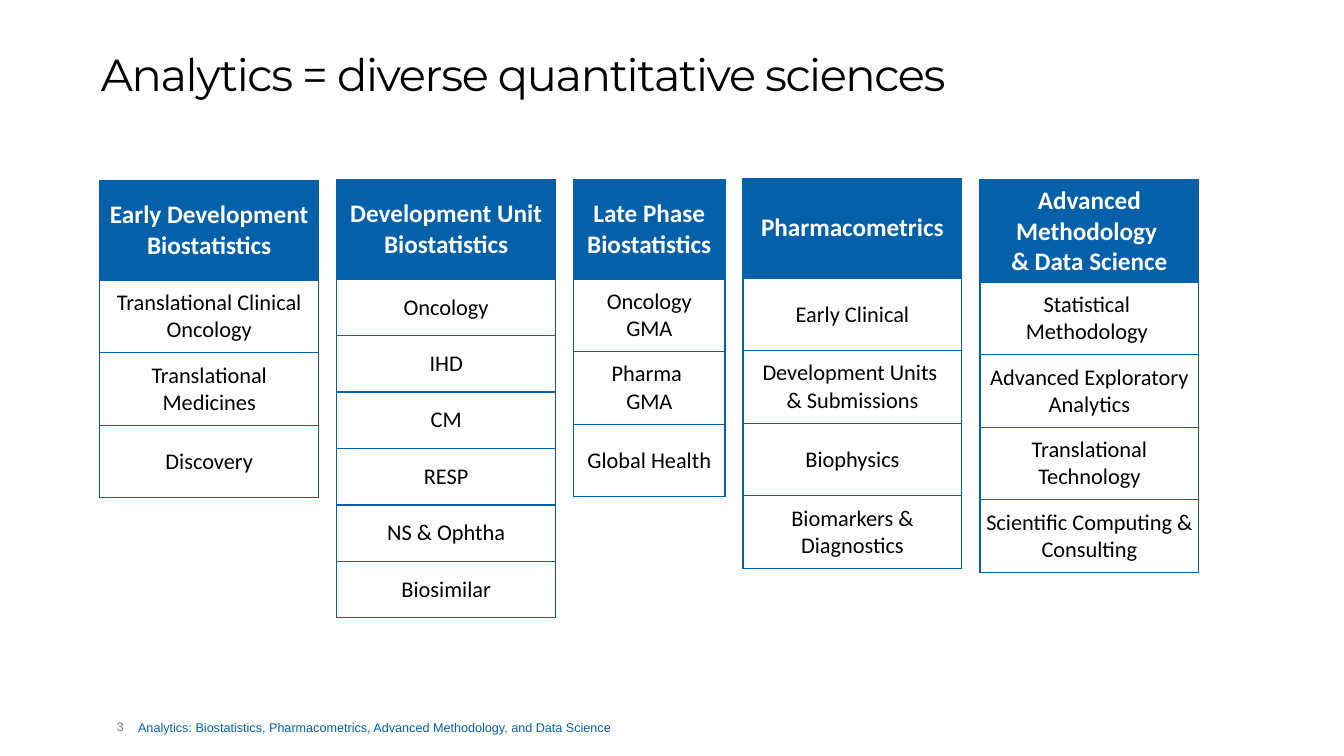
from dataclasses import dataclass

import pptx
import pptx.dml.color
import pptx.enum.text
import pptx.oxml
import pptx.oxml.ns
import pptx.util

Inches = pptx.util.Inches
ANCHOR = pptx.enum.text.MSO_ANCHOR
ALIGN = pptx.enum.text.PP_ALIGN


@dataclass(frozen=True)
class Theme:
    blue: str = "0460A9"
    white: str = "FFFFFF"
    black: str = "000000"
    grey: str = "7F7F7F"
    title_font: str = "Montserrat"
    table_font: str = "Calibri"
    footer_font: str = "Arial"
    title_size: int = 32
    heading_size: int = 18
    team_size: int = 16
    footer_size: int = 9


THEME = Theme()
LEFT, GAP = 0.99, 0.18
HEADING_HEIGHT = 0.99

DEPARTMENTS = [
    ("Early Development Biostatistics", 1.79, 2.17, 0.72,
     ["Translational Clinical Oncology", "Translational Medicines", "Discovery"]),
    ("Development Unit Biostatistics", 1.78, 2.17, 0.56,
     ["Oncology", "IHD", "CM", "RESP", "NS & Ophtha", "Biosimilar"]),
    ("Late Phase\nBiostatistics", 1.78, 1.5, 0.72,
     ["Oncology\vGMA", "Pharma \vGMA", "Global Health"]),
    ("Pharmacometrics", 1.77, 2.17, 0.72,
     ["Early Clinical", "Development Units \v& Submissions", "Biophysics",
      "Biomarkers & Diagnostics"]),
    ("Advanced Methodology \v& Data Science", 1.78, 2.17, 0.72,
     ["Statistical \vMethodology ", "Advanced Exploratory\vAnalytics",
      "Translational Technology", "Scientific Computing & Consulting"]),
]


def rgb(colour):
    return pptx.dml.color.RGBColor.from_string(colour)


def write(frame, text, *, font, size, colour, bold=False, align=ALIGN.LEFT,
          line_spacing=None, tracking=None):
    frame.text = text
    for paragraph in frame.paragraphs:
        paragraph.alignment = align
        paragraph.line_spacing = line_spacing
        for run in paragraph.runs:
            run.font.name = font
            run.font.size = pptx.util.Pt(size)
            run.font.bold = bold
            run.font.color.rgb = rgb(colour)
            if tracking is not None:
                run.font._element.set("spc", str(int(tracking * 100)))


def add_label(slide, text, left, top, width, height, anchor=ANCHOR.TOP, **style):
    label = slide.shapes.add_textbox(*map(Inches, (left, top, width, height)))
    frame = label.text_frame
    frame.word_wrap = True
    frame.vertical_anchor = anchor
    frame.margin_left = frame.margin_right = 0
    frame.margin_top = frame.margin_bottom = 0
    write(frame, text, **style)


def outline_cell(cell, colour):
    properties = cell._tc.get_or_add_tcPr()
    for position, side in enumerate(("lnL", "lnR", "lnT", "lnB")):
        properties.insert(position, pptx.oxml.parse_xml(
            f'<a:{side} {pptx.oxml.ns.nsdecls("a")} w="12700"><a:solidFill>'
            f'<a:srgbClr val="{colour}"/></a:solidFill></a:{side}>'))


def fill_cell(cell, text, fill, **style):
    cell.fill.solid()
    cell.fill.fore_color.rgb = rgb(fill)
    cell.vertical_anchor = ANCHOR.MIDDLE
    cell.margin_left = cell.margin_right = Inches(0.05)
    cell.margin_top = cell.margin_bottom = Inches(0.06)
    outline_cell(cell, THEME.blue)
    write(cell.text_frame, text, font=THEME.table_font, align=ALIGN.CENTER, **style)


def add_department(slide, left, heading, top, width, team_height, teams):
    height = HEADING_HEIGHT + team_height * len(teams)
    department = slide.shapes.add_table(
        len(teams) + 1, 1, *map(Inches, (left, top, width, height))).table
    department.horz_banding = False
    department.rows[0].height = Inches(HEADING_HEIGHT)
    fill_cell(department.cell(0, 0), heading, THEME.blue,
              size=THEME.heading_size, colour=THEME.white, bold=True)
    for row, team in enumerate(teams, 1):
        department.rows[row].height = Inches(team_height)
        fill_cell(department.cell(row, 0), team, THEME.white,
                  size=THEME.team_size, colour=THEME.black)


def main():
    deck = pptx.Presentation()
    deck.slide_width = Inches(13.33)
    deck.slide_height = Inches(7.5)
    slide = deck.slides.add_slide(deck.slide_layouts[6])

    add_label(slide, "Analytics = diverse quantitative sciences", 1, 0.5, 11.33, 1.05,
              font=THEME.title_font, size=THEME.title_size, colour=THEME.black,
              line_spacing=0.95, tracking=-1)

    left = LEFT
    for heading, top, width, team_height, teams in DEPARTMENTS:
        add_department(slide, left, heading, top, width, team_height, teams)
        left += width + GAP

    add_label(slide, "3", 1.16, 7.13, 0.33, 0.25,
              font=THEME.footer_font, size=THEME.footer_size, colour=THEME.grey)
    add_label(slide, "Analytics: Biostatistics, Pharmacometrics, Advanced Methodology, "
              "and Data Science", 1.37, 7.05, 6.16, 0.24, anchor=ANCHOR.BOTTOM,
              font=THEME.footer_font, size=THEME.footer_size, colour=THEME.blue)

    deck.save("out.pptx")


if __name__ == "__main__":
    main()
